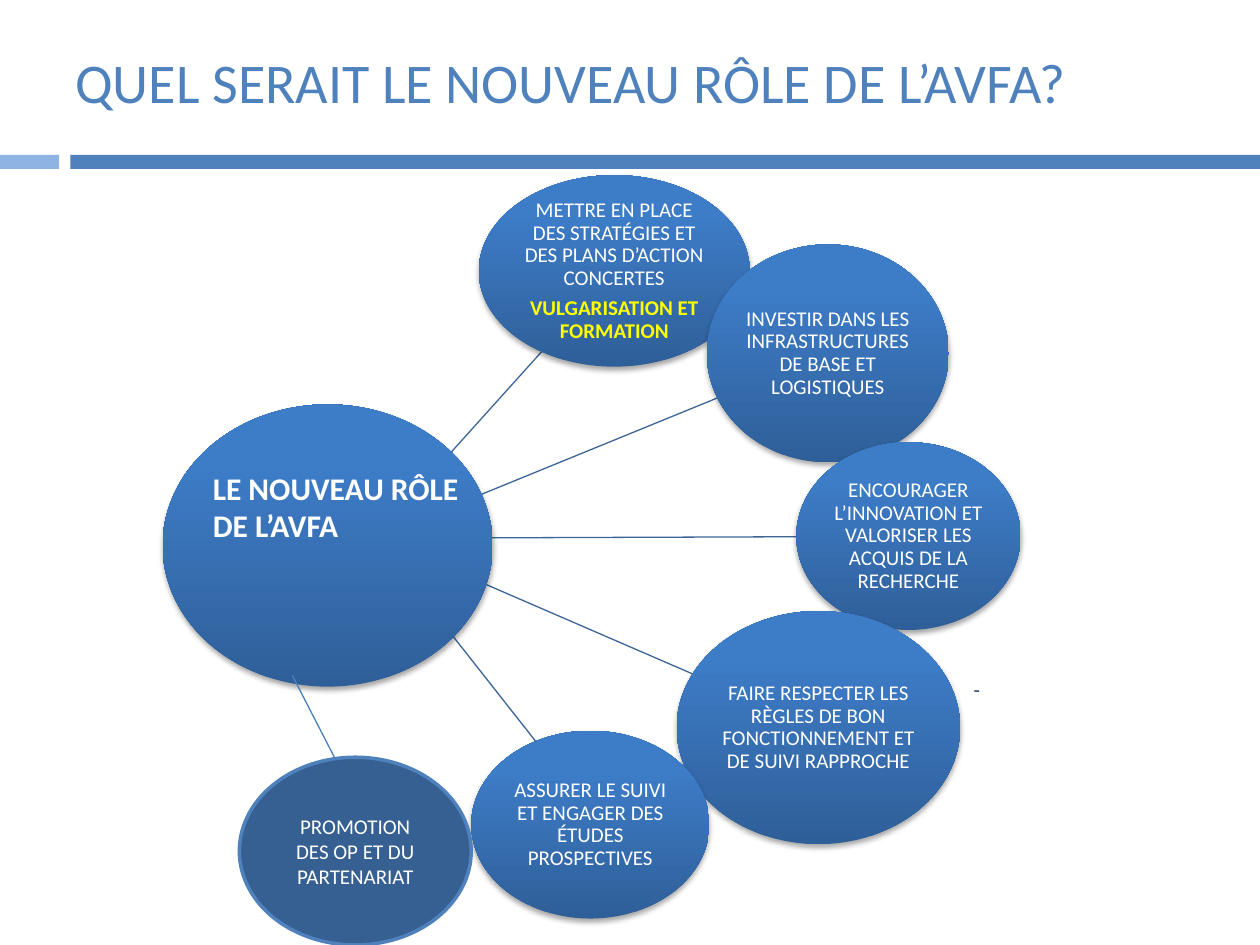
from dataclasses import dataclass
from typing import Optional

from lxml.etree import SubElement
from pptx import Presentation
from pptx.dml.color import RGBColor
from pptx.enum.shapes import MSO_CONNECTOR, MSO_SHAPE
from pptx.enum.text import MSO_ANCHOR, MSO_AUTO_SIZE, PP_ALIGN
from pptx.oxml.ns import qn
from pptx.util import Inches, Pt

# Grid of 100 columns by 75 rows
WIDTH, HEIGHT = Inches(10), Inches(7.5)
COL, ROW = WIDTH / 100, HEIGHT / 75

BLUE = RGBColor(0x4F, 0x81, 0xBD)
PALE = RGBColor(0x8E, 0xB4, 0xE3)
DEEP = RGBColor(0x37, 0x60, 0x92)
NAVY = RGBColor(0x25, 0x40, 0x61)
GRAD_LOW = RGBColor(0x2F, 0x5F, 0x99)
GRAD_HIGH = RGBColor(0x3D, 0x7C, 0xC7)
SPOKE = RGBColor(0x3B, 0x65, 0x96)
LINK = RGBColor(0x4B, 0x7E, 0xBC)
WHITE = RGBColor(0xFF, 0xFF, 0xFF)
YELLOW = RGBColor(0xFF, 0xFF, 0x00)


@dataclass
class Box:
    col: float
    row: float
    cols: float
    rows: float

    def emu(self) -> tuple:
        return (round(self.col * COL), round(self.row * ROW),
                round(self.cols * COL), round(self.rows * ROW))


@dataclass
class Line:
    start: tuple
    end: tuple
    color: RGBColor = SPOKE


@dataclass
class Bubble:
    box: Box
    text: str = ""
    highlight: str = ""


@dataclass
class Label:
    box: Box
    text: str
    font: dict
    anchor: MSO_ANCHOR = MSO_ANCHOR.TOP
    indent: Optional[float] = None


SPOKES = [
    Line((34.3, 48.4), (42.8, 59.2)),
    Line((35.6, 45.1), (55, 53.5)),
    Line((35.6, 42.7), (63.2, 42.6)),
    Line((35.6, 40.3), (56.9, 31.6)),
    Line((34.9, 36.9), (43, 27.9)),
]
BUBBLES = [
    Bubble(Box(12.9, 32.1, 26.2, 22.4)),
    Bubble(Box(38, 13.9, 21.5, 15.2),
           "METTRE EN PLACE DES STRATÉGIES ET DES PLANS D’ACTION CONCERTES",
           "VULGARISATION ET FORMATION"),
    Bubble(Box(56.1, 19.4, 19.2, 17.3),
           "INVESTIR DANS LES INFRASTRUCTURES DE BASE ET LOGISTIQUES"),
    Bubble(Box(63.2, 35.1, 17.8, 14.9),
           "ENCOURAGER L’INNOVATION ET VALORISER LES ACQUIS DE LA RECHERCHE"),
    Bubble(Box(53.7, 48.5, 22.5, 18.5),
           "FAIRE RESPECTER LES RÈGLES DE BON FONCTIONNEMENT ET DE SUIVI RAPPROCHE"),
    Bubble(Box(37.4, 58, 18.9, 14.9),
           "ASSURER LE SUIVI ET ENGAGER DES ÉTUDES PROSPECTIVES"),
]
TITLE = Label(Box(5, 1.3, 90, 10.2), "QUEL SERAIT LE NOUVEAU RÔLE DE L’AVFA?",
              dict(size=Pt(32), color=BLUE), MSO_ANCHOR.MIDDLE)
LABELS = [
    Label(Box(71.3, 53.2, 28.7, 3), "-", dict(size=Pt(12), color=NAVY), indent=5),
    Label(Box(15.9, 36.7, 21.5, 7.1), "LE NOUVEAU RÔLE DE L’AVFA",
          dict(size=Pt(18), color=WHITE, bold=True)),
]


def write(p, text: str, **style) -> None:
    r = p.add_run()
    r.text = text
    r.font.color.rgb = style.pop("color")
    for name, value in {"name": "Calibri", "size": Pt(12), **style}.items():
        setattr(r.font, name, value)


def add_plain(s, box: Box, kind: MSO_SHAPE, color: RGBColor):
    sp = s.shapes.add_shape(kind, *box.emu())
    sp.shadow.inherit = False
    sp.fill.solid()
    sp.fill.fore_color.rgb = color
    sp.line.fill.background()
    return sp


def add_line(s, line: Line) -> None:
    (x1, y1), (x2, y2) = line.start, line.end
    cx = s.shapes.add_connector(MSO_CONNECTOR.STRAIGHT, round(x1 * COL),
                                round(y1 * ROW), round(x2 * COL), round(y2 * ROW))
    cx.line.color.rgb = line.color
    cx.line.width = Pt(0.75)
    SubElement(cx._element.spPr, qn("a:effectLst"))


def add_shadow(sp) -> None:
    effects = sp._element.spPr.find(qn("a:effectLst"))
    shadow = SubElement(effects, qn("a:outerShdw"), blurRad=str(Pt(3.1)),
                        dist=str(Pt(1.8)), dir="5400000", rotWithShape="0")
    color = SubElement(shadow, qn("a:srgbClr"), val="000000")
    SubElement(color, qn("a:alpha"), val="35000")


def add_bubble(s, bubble: Bubble) -> None:
    sp = add_plain(s, bubble.box, MSO_SHAPE.OVAL, GRAD_HIGH)
    sp.fill.gradient()
    sp.fill.gradient_angle = 90
    stops = [(0, GRAD_LOW), (0.8, GRAD_HIGH)]
    for stop, (position, color) in zip(sp.fill.gradient_stops, stops):
        stop.position = position
        stop.color.rgb = color
    add_shadow(sp)
    if not bubble.text:
        return
    tf = sp.text_frame
    margins = ("margin_left", "margin_top", "margin_right", "margin_bottom")
    for name, value in {"word_wrap": True, "vertical_anchor": MSO_ANCHOR.MIDDLE,
                        **dict.fromkeys(margins, Inches(0.01))}.items():
        setattr(tf, name, value)
    write(tf.paragraphs[0], bubble.text, color=WHITE)
    if bubble.highlight:
        write(tf.add_paragraph(), bubble.highlight, color=YELLOW, bold=True)
    for p in tf.paragraphs:
        for name, value in dict(alignment=PP_ALIGN.CENTER, line_spacing=0.9,
                                space_after=Pt(4.2)).items():
            setattr(p, name, value)


def add_label(s, label: Label) -> None:
    tf = s.shapes.add_textbox(*label.box.emu()).text_frame
    for name, value in dict(word_wrap=True, vertical_anchor=label.anchor,
                            auto_size=MSO_AUTO_SIZE.NONE).items():
        setattr(tf, name, value)
    p = tf.paragraphs[0]
    write(p, label.text, **label.font)
    if label.indent:
        p._p.get_or_add_pPr().set("marL", str(round(label.indent * COL)))


def add_partnership(s) -> None:
    add_line(s, Line((23.2, 53.6), (28.7, 64.3), LINK))
    sp = add_plain(s, Box(19, 60.1, 18.4, 14.9), MSO_SHAPE.OVAL, DEEP)
    sp.line.color.rgb = BLUE
    sp.line.width = Pt(2)
    tf = sp.text_frame
    tf.word_wrap = True
    tf.vertical_anchor = MSO_ANCHOR.MIDDLE
    p = tf.paragraphs[0]
    p.alignment = PP_ALIGN.CENTER
    write(p, "PROMOTION DES OP ET DU PARTENARIAT", color=WHITE)


def main() -> None:
    prs = Presentation()
    prs.slide_width, prs.slide_height = WIDTH, HEIGHT
    s = prs.slides.add_slide(prs.slide_layouts[6])

    # Title and the band under it
    add_plain(s, Box(5.6, 12.3, 94.4, 1.1), MSO_SHAPE.RECTANGLE, BLUE)
    add_plain(s, Box(0, 12.3, 4.7, 1.1), MSO_SHAPE.RECTANGLE, PALE)
    add_label(s, TITLE)

    # Hub, spokes and surrounding roles
    for line in SPOKES:
        add_line(s, line)
    for bubble in BUBBLES:
        add_bubble(s, bubble)
    for label in LABELS:
        add_label(s, label)
    add_partnership(s)

    prs.save("out.pptx")


if __name__ == "__main__":
    main()
